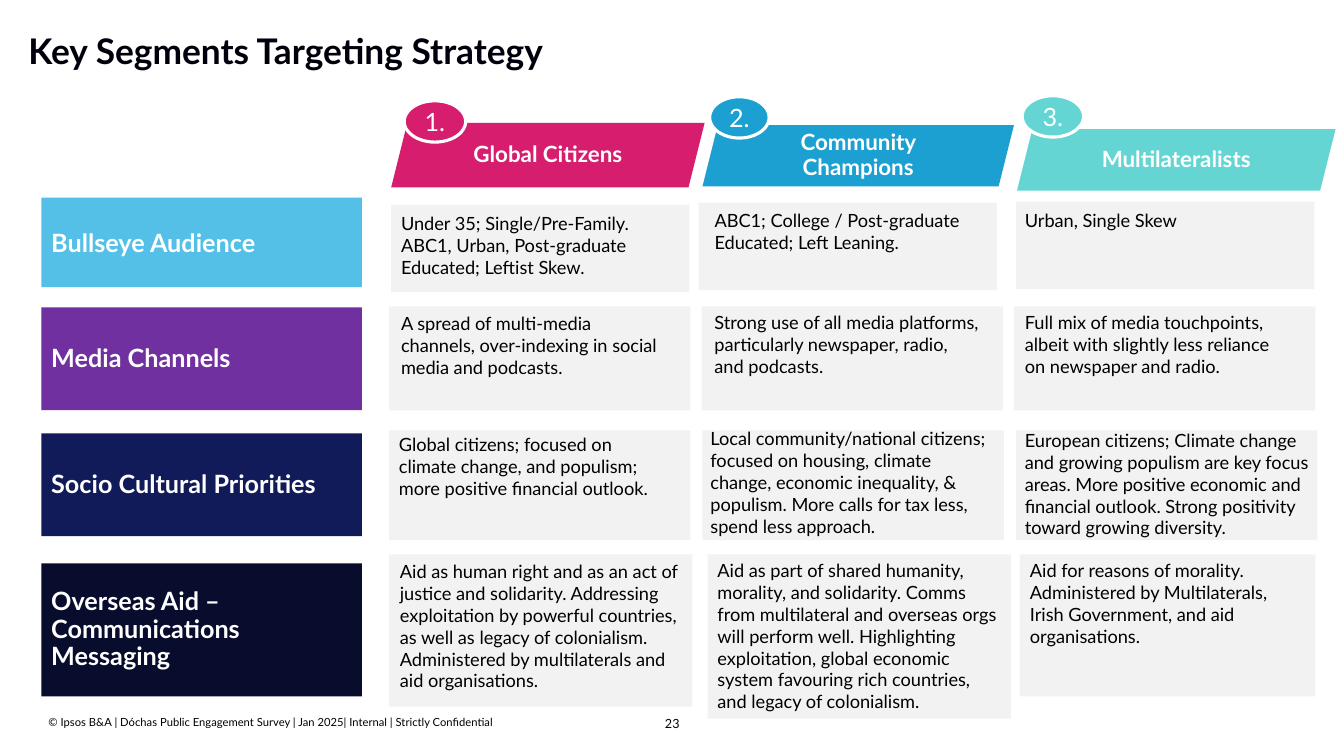
from pptx import Presentation
from pptx.dml.color import RGBColor
from pptx.enum.shapes import MSO_SHAPE
from pptx.enum.text import MSO_ANCHOR, PP_ALIGN
from pptx.util import Pt

RECT, OVAL, SLANT = MSO_SHAPE.RECTANGLE, MSO_SHAPE.OVAL, MSO_SHAPE.PARALLELOGRAM
TOP, MIDDLE, BOTTOM = MSO_ANCHOR.TOP, MSO_ANCHOR.MIDDLE, MSO_ANCHOR.BOTTOM
LEFT, CENTER = PP_ALIGN.LEFT, PP_ALIGN.CENTER

FONT = "Lato"
WHITE, BLACK, INK, CARD = "FFFFFF", "000000", "00000C", "F2F2F2"
INSETS = (7.2, 3.6, 7.2, 3.6)
NO_INSETS = (0, 0, 0, 0)
HEADER_INSETS = (6, 11.5, 6, 11.5)

TITLE = "Key Segments Targeting Strategy"
FOOTER = "© Ipsos B&A | Dóchas Public Engagement Survey | Jan 2025| Internal | Strictly Confidential"
PAGE = "23"

# Boxes are (left, top, width, height) in points.
# name, colour, header box, badge box
SEGMENTS = [
    ("Global Citizens", "D61D6E", (279.4, 87.8, 223.9, 46.1), (288.7, 72, 43.9, 29.5)),
    ("Community Champions", "1CA0D1", (501.8, 89.3, 222.5, 43.9), (506.9, 69.1, 42.5, 29.5)),
    ("Multilateralists", "65D5D4", (726.5, 92.2, 227.5, 43.9), (730.1, 68.4, 43.9, 29.5)),
]

# label, colour, top, height, right inset, line spacing
LABEL_LEFT, LABEL_WIDTH = 29.5, 229
LABELS = [
    ("Bullseye Audience", "54C0E8", 141.1, 64.1, 73.4, 1),
    ("Media Channels", "7030A0", 219.6, 73.4, 28, 0.9),
    ("Socio Cultural Priorities", "121B5A", 309.6, 73.4, 0, 0.9),
    ("Overseas Aid – Communications Messaging", "090D2D", 402.5, 95, 0, 0.9),
]

# card box, text place (left, top, width, lines) or None for text inside the card, text
CELLS = [
    ((279.4, 146.2, 213.1, 62.6), (279.4, 148.3, 204.5, 3),
     "Under 35; Single/Pre-Family. ABC1, Urban, Post-graduate Educated; Leftist Skew."),
    ((499, 144.7, 213.1, 62.6), (503.3, 146.2, 215.3, 2),
     "ABC1; College / Post-graduate Educated; Left Leaning."),
    ((725.8, 144, 213.1, 62.6), (725, 146.2, 204.5, 1),
     "Urban, Single Skew"),
    ((277.9, 218.9, 215.3, 74.2), (279.4, 219.6, 204.5, 3),
     "A spread of multi-media channels, over-indexing in social media and podcasts."),
    ((501.1, 218.9, 215.3, 74.2), (503.3, 218.9, 204.5, 3),
     "Strong use of all media platforms, particularly newspaper, radio, and podcasts."),
    ((724.3, 218.9, 215.3, 74.2), (725, 218.9, 204.5, 3),
     "Full mix of media touchpoints, albeit with slightly less reliance on newspaper and radio."),
    ((277.9, 307.4, 215.3, 78.5), (277.9, 306, 204.5, 3),
     "Global citizens; focused on climate change, and populism; more positive financial outlook."),
    ((501.8, 307.4, 215.3, 78.5), (500.4, 301.7, 213.1, 5),
     "Local community/national citizens; focused on housing, climate change, economic "
     "inequality, & populism. More calls for tax less, spend less approach."),
    ((725.8, 307.4, 215.3, 78.5), (725, 303.1, 221, 5),
     "European citizens; Climate change and growing populism are key focus areas. More positive "
     "economic and financial outlook. Strong positivity toward growing diversity."),
    ((277.9, 396, 216.7, 108.7), (278.6, 396.7, 221, 6),
     "Aid as human right and as an act of justice and solidarity. Addressing exploitation by "
     "powerful countries, as well as legacy of colonialism. Administered by multilaterals and "
     "aid organisations."),
    ((505.4, 396, 216.7, 117.4), None,
     "Aid as part of shared humanity, morality, and solidarity. Comms from multilateral and "
     "overseas orgs will perform well. Highlighting exploitation, global economic system "
     "favouring rich countries, and legacy of colonialism."),
    ((728.6, 396, 211, 101.5), None,
     "Aid for reasons of morality. Administered by Multilaterals, Irish Government, and aid "
     "organisations."),
]
LINE_HEIGHT = 15.7


def rgb(color):
    return RGBColor.from_string(color)


def write(sp, text, size, color=BLACK, bold=False, align=LEFT, anchor=TOP,
          insets=INSETS, spacing=1):
    tf = sp.text_frame
    tf.word_wrap = True
    tf.vertical_anchor = anchor
    tf.margin_left, tf.margin_top, tf.margin_right, tf.margin_bottom = map(Pt, insets)
    p = tf.paragraphs[0]
    p.text = text
    p.alignment = align
    p.line_spacing = spacing
    p.font.name = FONT
    p.font.size = Pt(size)
    p.font.bold = bold
    p.font.color.rgb = rgb(color)


def add_box(s, box):
    return s.shapes.add_textbox(*map(Pt, box))


def add_filled(s, kind, box, fill, outline=None):
    sp = s.shapes.add_shape(kind, *map(Pt, box))
    sp.shadow.inherit = False
    sp.fill.solid()
    sp.fill.fore_color.rgb = rgb(fill)
    if outline:
        sp.line.color.rgb = rgb(outline)
        sp.line.width = Pt(2.25)
    else:
        sp.line.fill.background()
    return sp


def main():
    prs = Presentation()
    prs.slide_width, prs.slide_height = Pt(960), Pt(540)
    s = prs.slides.add_slide(prs.slide_layouts[6])

    write(add_box(s, (460.8, 510.5, 38.9, 10.8)), PAGE, 9, align=CENTER,
          insets=NO_INSETS, spacing=1.1)
    write(add_box(s, (34.6, 511.2, 439.2, 9.4)), FOOTER, 8, anchor=BOTTOM, insets=NO_INSETS)
    write(add_box(s, (20.2, 22.3, 770.4, 29.5)), TITLE, 25.2, INK, True, anchor=BOTTOM,
          insets=NO_INSETS, spacing=0.9)

    for label, color, top, height, right_inset, spacing in LABELS:
        sp = add_filled(s, RECT, (LABEL_LEFT, top, LABEL_WIDTH, height), color)
        write(sp, label, 18, WHITE, True, anchor=MIDDLE,
              insets=(7.2, 3.6, right_inset, 3.6), spacing=spacing)

    for card, place, text in CELLS:
        sp = add_filled(s, RECT, card, CARD)
        if place:
            left, top, width, lines = place
            sp = add_box(s, (left, top, width, lines * LINE_HEIGHT + 7.2))
        write(sp, text, 13)

    for number, (name, color, header, badge) in enumerate(SEGMENTS, 1):
        write(add_filled(s, SLANT, header, color), name, 16, WHITE, True, CENTER, MIDDLE,
              HEADER_INSETS, 0.9)
        write(add_filled(s, OVAL, badge, color, WHITE), f"{number}.", 18, WHITE,
              align=CENTER, anchor=MIDDLE)

    prs.save("out.pptx")


if __name__ == "__main__":
    main()
